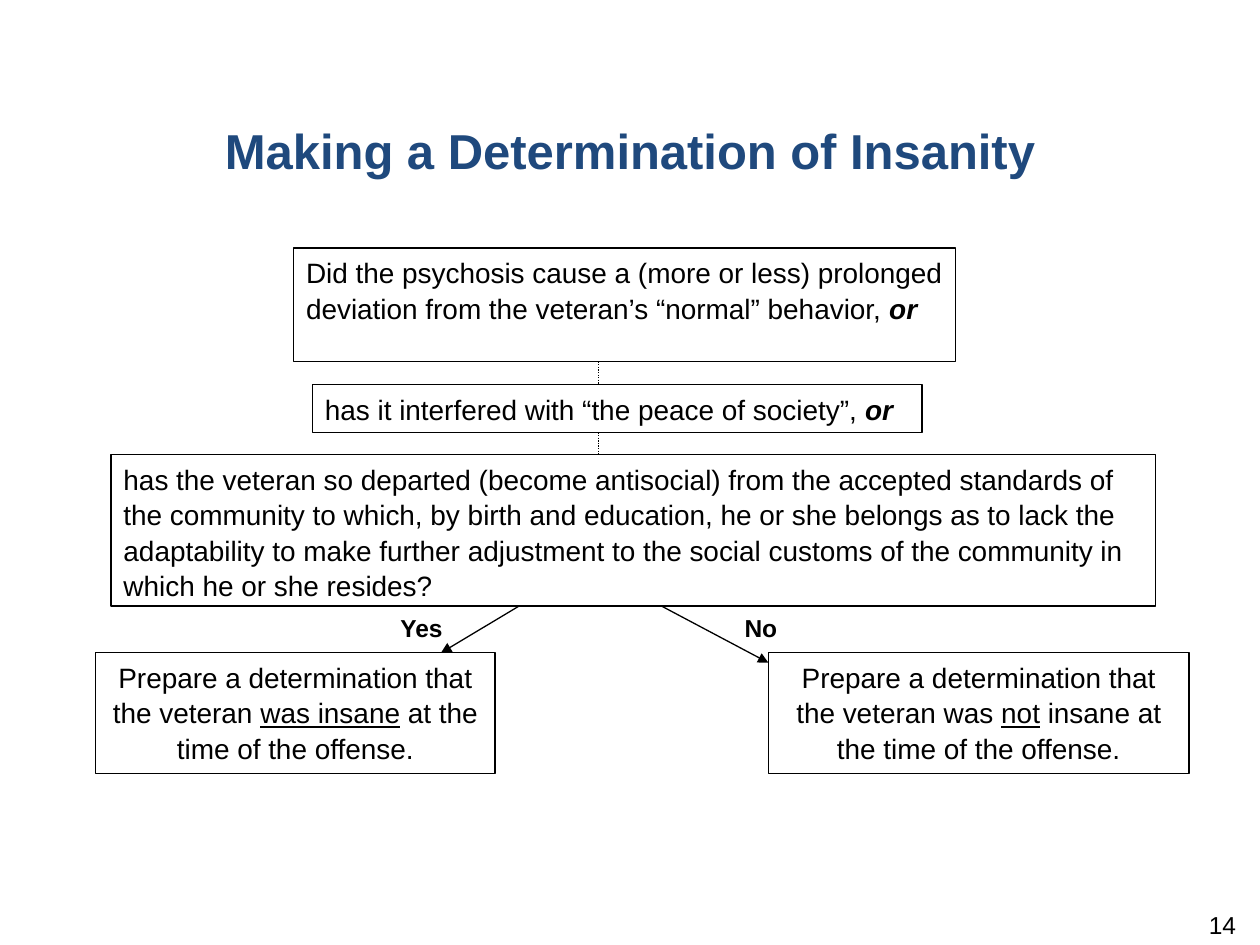
from lxml import etree
from pptx import Presentation
from pptx import util as u
from pptx.dml.color import RGBColor
from pptx.enum import dml, shapes, text
from pptx.oxml.ns import qn

LEFT, MID, RIGHT = text.PP_ALIGN.LEFT, text.PP_ALIGN.CENTER, text.PP_ALIGN.RIGHT


def cm(*vals):
    return [u.Cm(v) for v in vals]


def hue(code):
    return RGBColor.from_string(code)


def style(para, size, align=LEFT, code="000000", bold=None):
    para.alignment = align
    font = para.font
    font.name, font.size, font.bold = "Arial", u.Pt(size), bold
    font.color.rgb = hue(code)


def head(slide, box, words):
    title = slide.shapes.title
    title.left, title.top, title.width, title.height = cm(*box)
    frame = title.text_frame
    frame.text = words
    frame.vertical_anchor = text.MSO_ANCHOR.TOP
    frame.margin_top = u.Cm(0.22)
    style(frame.paragraphs[0], 28, MID, "1F497D", True)


def card(slide, box, runs, align=LEFT):
    """Outlined box; each run is (words, marks), marks among b, i, u."""
    rect = slide.shapes.add_shape(shapes.MSO_SHAPE.RECTANGLE, *cm(*box))
    rect.shadow.inherit = False
    rect.fill.solid()
    rect.fill.fore_color.rgb = hue("FFFFFF")
    rect.line.color.rgb = hue("000000")
    rect.line.width = u.Pt(0.75)
    frame = rect.text_frame
    frame.word_wrap = True
    frame.vertical_anchor = text.MSO_ANCHOR.TOP
    if align == LEFT:
        frame.margin_right = u.Cm(0.13)
    para = frame.paragraphs[0]
    style(para, 16, align)
    para.line_spacing = 1.05
    for words, marks in runs:
        run = para.add_run()
        run.text = words
        if "b" in marks:
            run.font.bold = True
        if "i" in marks:
            run.font.italic = True
        if "u" in marks:
            run.font.underline = True


def link(slide, start, end, arrow=False):
    line = slide.shapes.add_connector(
        shapes.MSO_CONNECTOR.STRAIGHT, *cm(*start, *end))
    line.line.color.rgb = hue("000000")
    line.line.width = u.Pt(0.75)
    if arrow:
        ln = line.line._get_or_add_ln()
        etree.SubElement(ln, qn("a:tailEnd"), type="triangle")
    else:
        line.line.dash_style = dml.MSO_LINE.ROUND_DOT
    etree.SubElement(line._element.spPr, qn("a:effectLst"))


def label(slide, box, words, align=LEFT, bold=None, top=0.13):
    frame = slide.shapes.add_textbox(*cm(*box)).text_frame
    frame.word_wrap = align == RIGHT
    frame.margin_top = u.Cm(top)
    frame.text = words
    style(frame.paragraphs[0], 14, align, bold=bold)


def tests(slide, x, y):
    """Three linked questions, placed from the corner x, y."""
    card(slide, (x + 3.68, y, 13.34, 2.29), [
        ("Did the psychosis cause a (more or less) prolonged deviation "
         "from the veteran’s “normal” behavior, ", ""), ("or", "bi")])
    card(slide, (x + 4.06, y + 2.75, 12.29, 0.97), [
        ("has it interfered with “the peace of society”, ", ""), ("or", "bi")])
    card(slide, (x, y + 4.17, 21.06, 3.05), [
        ("has the veteran so departed (become antisocial) from the accepted "
         "standards of the community to which, by birth and education, he or "
         "she belongs as to lack the adaptability to make further adjustment "
         "to the social customs of the community in which he or she "
         "resides?", "")])
    for top, low in ((2.29, 2.75), (3.72, 4.17)):
        link(slide, (x + 9.83, y + top), (x + 9.83, y + low))


def results(slide, x, y):
    """Yes and No branches, placed from the corner x, y."""
    link(slide, (x + 8.53, y), (x + 6.96, y + 0.94), True)
    link(slide, (x + 11.41, y), (x + 13.56, y + 1.14), True)
    card(slide, (x, y + 0.94, 8.05, 2.44), [
        ("Prepare a determination that the veteran ", ""),
        ("was insane", "u"), (" at the time of the offense.", "")], MID)
    card(slide, (x + 13.56, y + 0.94, 8.48, 2.44), [
        ("Prepare a determination that the veteran was ", ""),
        ("not", "u"), (" insane at the time of the offense.", "")], MID)
    for left, words in ((5.89, "Yes"), (12.83, "No")):
        label(slide, (x + left, y, 1.45, 0.86), words, bold=True)


def main():
    deck = Presentation()
    deck.slide_width, deck.slide_height = cm(25.4, 19.05)
    slide = deck.slides.add_slide(deck.slide_layouts[5])
    head(slide, (0, 2.21, 25.4, 3.02), "Making a Determination of Insanity")
    tests(slide, 2.24, 5)
    results(slide, 1.93, 12.22)
    label(slide, (19.25, 18.34, 5.92, 1.02), "14", RIGHT, top=0)
    deck.save("out.pptx")


if __name__ == "__main__":
    main()
